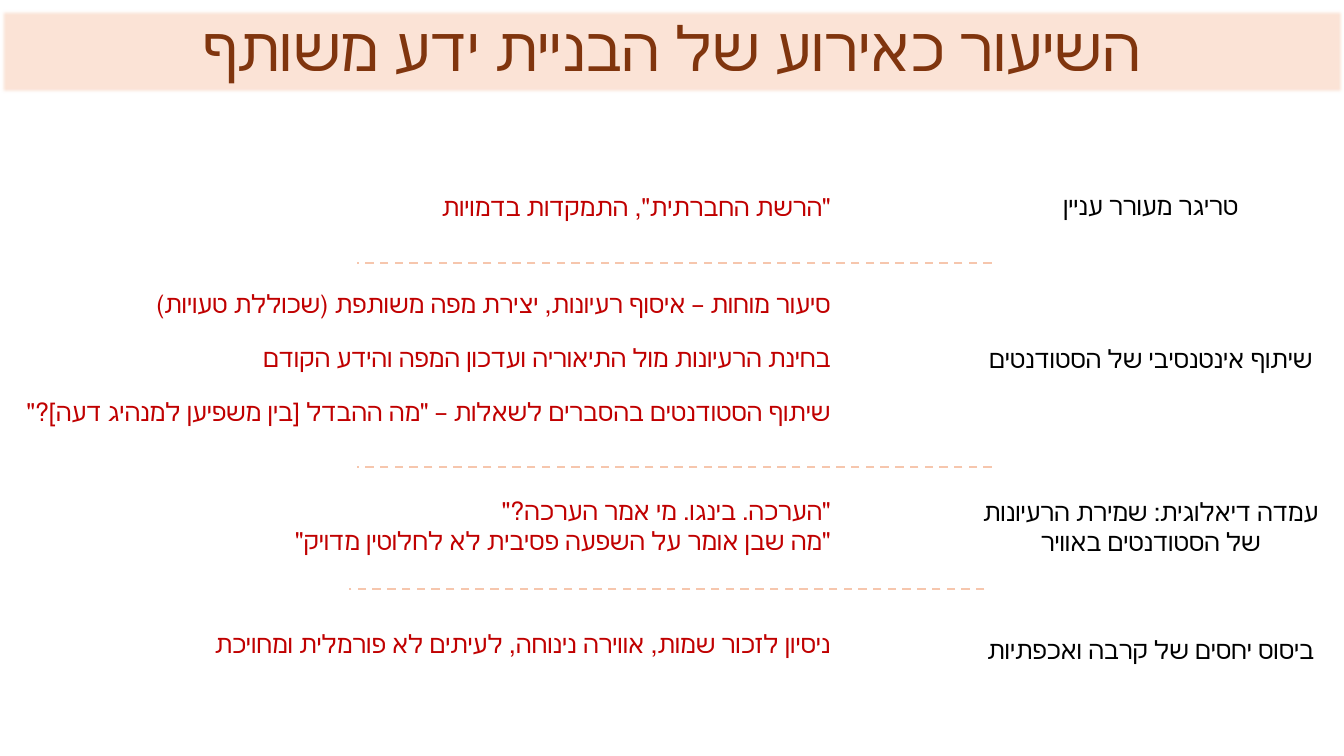
import pptx
import pptx.util
import pptx.dml.color
import pptx.enum.dml
import pptx.enum.shapes
import pptx.enum.text
import pptx.oxml
import pptx.oxml.ns

Pt = pptx.util.Pt
SHAPE = pptx.enum.shapes.MSO_SHAPE
ALIGN = pptx.enum.text.PP_ALIGN
SLIDE_W, SLIDE_H = 960, 540
ROW_H, ANSWER_STEP = 36, 38.6
LABEL_X, LABEL_W = 685.5, 273
ANSWER_W = 602.3
RULE_W = 453.6

TITLE = "השיעור כאירוע של הבניית ידע משותף"
TOPICS = [
    ("טריגר מעורר עניין", 128.9, 129.6, ['"הרשת החברתית", התמקדות בדמויות']),
    ("שיתוף אינטנסיבי של הסטודנטים", 238.3, 198.5, [
        "סיעור מוחות – איסוף רעיונות, יצירת מפה משותפת (שכוללת טעויות)",
        "בחינת הרעיונות מול התיאוריה ועדכון המפה והידע הקודם",
        'שיתוף הסטודנטים בהסברים לשאלות – "מה ההבדל [בין משפיען למנהיג דעה]?"',
    ]),
    ("עמדה דיאלוגית: שמירת הרעיונות של הסטודנטים באוויר", 357.8, 357.6, [
        '"הערכה. בינגו. מי אמר הערכה?" \v"מה שבן אומר על השפעה פסיבית לא לחלוטין מדויק"',
    ]),
    ("ביסוס יחסים של קרבה ואכפתיות", 445.7, 441.8, [
        "ניסיון לזכור שמות, אווירה נינוחה, לעיתים לא פורמלית ומחויכת",
    ]),
]
RULES = [(254.9, 187.9), (254.9, 333.8), (249.6, 420.5)]


def rgb(value):
    """Turn a hex string into a colour."""
    return pptx.dml.color.RGBColor.from_string(value)


def add_effects(sp, xml=""):
    """Give a shape an effect list holding the given XML."""
    ns = pptx.oxml.ns.nsdecls("a")
    sp._element.spPr.append(pptx.oxml.parse_xml(f"<a:effectLst {ns}>{xml}</a:effectLst>"))


def add_text(slide, text, box, kind=SHAPE.ROUNDED_RECTANGLE, fill=None, color="000000",
             size=18, font="Cabin", align=ALIGN.CENTER, spacing=None):
    """Add a shape with right-to-left text."""
    sp = slide.shapes.add_shape(kind, *map(Pt, box))
    sp.line.fill.background()
    if fill:
        sp.fill.solid()
        sp.fill.fore_color.rgb = rgb(fill)
    else:
        sp.fill.background()
    tf = sp.text_frame
    tf.word_wrap = True
    tf.vertical_anchor = pptx.enum.text.MSO_ANCHOR.MIDDLE
    p = tf.paragraphs[0]
    p.text = text
    p.alignment = align
    p.line_spacing = spacing
    p._p.get_or_add_pPr().set("rtl", "1")
    for r in p.runs:
        r.font.size = Pt(size)
        r.font.name = font
        r.font.color.rgb = rgb(color)
        r.font._element.set("lang", "he-IL")
    return sp


def add_title(slide, box):
    """Add the title band with soft edges."""
    sp = add_text(slide, TITLE, box, kind=SHAPE.RECTANGLE, fill="FBE3D6",
                  color="80350E", size=44, font="Calibri", spacing=0.9)
    add_effects(sp, '<a:softEdge rad="31750"/>')


def add_topic(slide, label, label_top, answer_top, answers):
    """Add a topic label and its answers to the left."""
    add_text(slide, label, (LABEL_X, label_top, LABEL_W, ROW_H)).shadow.inherit = False
    for i, answer in enumerate(answers):
        box = (0, answer_top + i * ANSWER_STEP, ANSWER_W, ROW_H)
        sp = add_text(slide, answer, box, color="C00000", align=ALIGN.RIGHT)
        sp.shadow.inherit = False


def add_rule(slide, x, y):
    """Add a dashed rule between topics, drawn from right to left."""
    line = slide.shapes.add_connector(pptx.enum.shapes.MSO_CONNECTOR.STRAIGHT,
                                      Pt(x + RULE_W), Pt(y), Pt(x), Pt(y))
    line.line.color.rgb = rgb("F6C6AD")
    line.line.width = Pt(1.5)
    line.line.dash_style = pptx.enum.dml.MSO_LINE.DASH
    add_effects(line)


def main():
    """Build and save the slide."""
    prs = pptx.Presentation()
    prs.slide_width, prs.slide_height = Pt(SLIDE_W), Pt(SLIDE_H)
    slide = prs.slides.add_slide(prs.slide_layouts[6])
    add_title(slide, (0, 6.5, SLIDE_W, 60.5))
    for topic in TOPICS:
        add_topic(slide, *topic)
    for x, y in RULES:
        add_rule(slide, x, y)
    prs.save("out.pptx")


if __name__ == "__main__":
    main()
